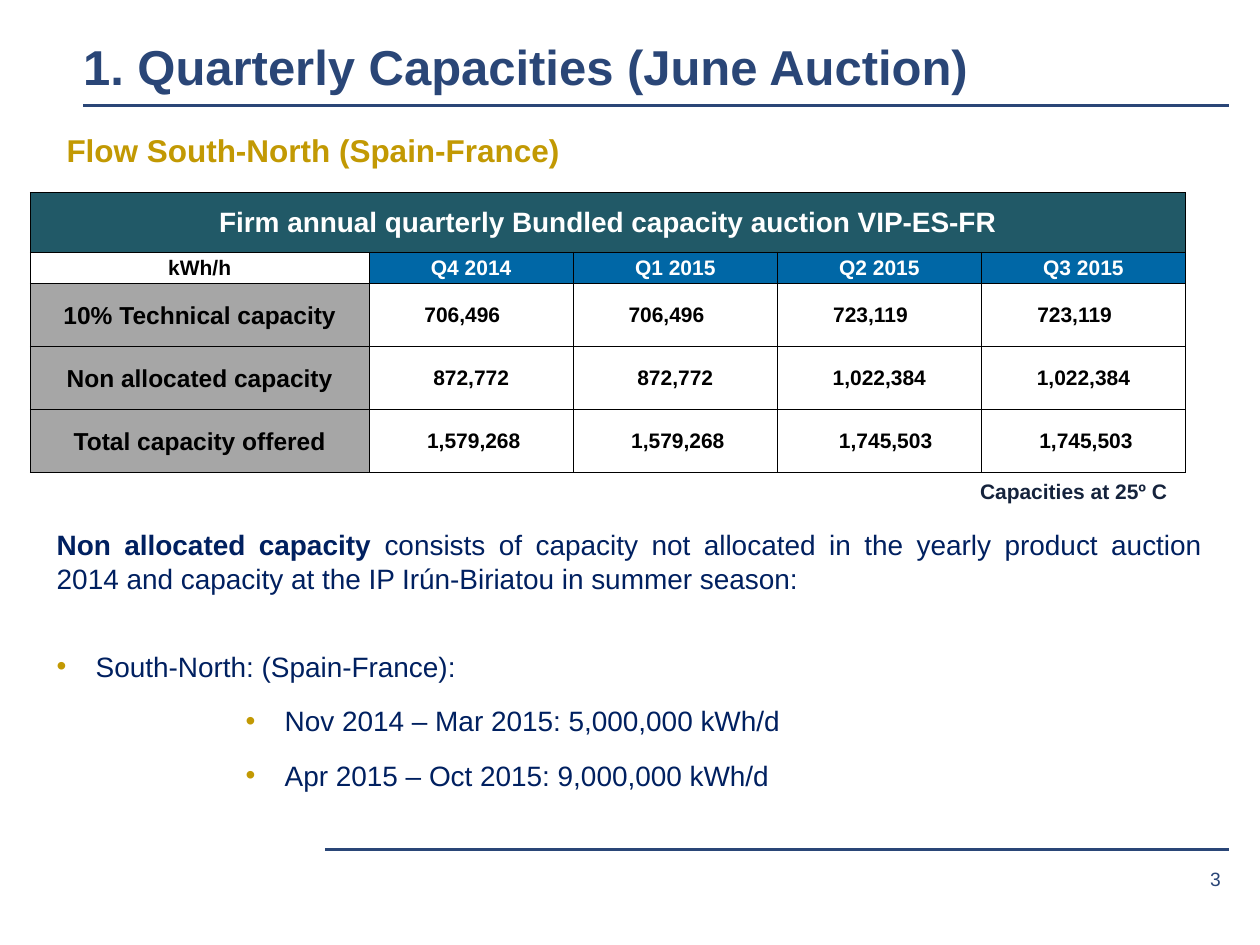
import pptx
import pptx.dml.color
import pptx.enum.shapes
import pptx.enum.text
import pptx.oxml.ns
import pptx.util
from dataclasses import dataclass
from lxml import etree
from typing import NamedTuple

Inches = pptx.util.Inches
Align = pptx.enum.text.PP_ALIGN
Anchor = pptx.enum.text.MSO_ANCHOR


@dataclass(frozen=True)
class Theme:
    font: str = "Arial"
    navy: str = "2A4677"
    gold: str = "C29903"
    body: str = "002060"
    note: str = "15233C"
    black: str = "000000"
    white: str = "FFFFFF"
    teal: str = "215967"
    blue: str = "0067A6"
    gray: str = "A6A6A6"
    title_size: int = 28
    subtitle_size: int = 18
    text_size: int = 16
    label_size: int = 14
    value_size: int = 12
    number_size: int = 11


THEME = Theme()


class Rule(NamedTuple):
    left: float
    right: float
    top: float


class Box(NamedTuple):
    left: float
    top: float
    width: float
    height: float


class CapacityRow(NamedTuple):
    label: str
    values: tuple
    shifts: tuple  # sideways offset of each value, in inches


class Bullet(NamedTuple):
    text: str
    level: int
    indent: float
    before: float


RULES = [Rule(0.66, 9.75, 0.84), Rule(2.58, 9.75, 6.74)]
QUARTERS = ("Q4 2014", "Q1 2015", "Q2 2015", "Q3 2015")
CAPACITIES = [
    CapacityRow("10% Technical capacity",
                ("706,496", "706,496", "723,119", "723,119"), (-0.07,) * 4),
    CapacityRow("Non allocated capacity",
                ("872,772", "872,772", "1,022,384", "1,022,384"), (0,) * 4),
    CapacityRow("Total capacity offered",
                ("1,579,268", "1,579,268", "1,745,503", "1,745,503"),
                (0.02, 0.02, 0.05, 0.02)),
]
BULLETS = [
    Bullet("South-North: (Spain-France):", 0, 0.31, 25),
    Bullet("Nov 2014 – Mar 2015: 5,000,000 kWh/d", 1, 1.81, 6),
    Bullet("Apr 2015 – Oct 2015: 9,000,000 kWh/d", 1, 1.81, 6),
]


def rgb(color: str):
    return pptx.dml.color.RGBColor.from_string(color)


def add_element(parent, tag: str, **attributes):
    return etree.SubElement(parent, pptx.oxml.ns.qn(tag), attributes)


def write(paragraph, text: str, *, size: float, color: str, bold: bool = False,
          align=Align.LEFT, before: float = 0, after: float = 0) -> None:
    """Append a formatted run and set the spacing of its paragraph."""
    paragraph.alignment = align
    paragraph.space_before = pptx.util.Pt(before)
    paragraph.space_after = pptx.util.Pt(after)
    run = paragraph.add_run()
    run.text = text
    run.font.name = THEME.font
    run.font.size = pptx.util.Pt(size)
    run.font.bold = bold
    run.font.color.rgb = rgb(color)


def set_frame(frame, *, inset: tuple = (0.1, 0.05), anchor=Anchor.TOP,
              wrap: bool = True):
    frame.auto_size = pptx.enum.text.MSO_AUTO_SIZE.NONE
    frame.word_wrap = wrap
    frame.vertical_anchor = anchor
    frame.margin_left = frame.margin_right = Inches(inset[0])
    frame.margin_top = frame.margin_bottom = Inches(inset[1])
    return frame.paragraphs[0]


def place(shape, box: Box) -> None:
    shape.left, shape.top, shape.width, shape.height = map(Inches, box)


def add_text_box(slide, box: Box, **frame_format):
    shape = slide.shapes.add_textbox(*map(Inches, box))
    return set_frame(shape.text_frame, **frame_format)


def add_rule(slide, rule: Rule) -> None:
    line = slide.shapes.add_connector(
        pptx.enum.shapes.MSO_CONNECTOR.STRAIGHT,
        Inches(rule.left), Inches(rule.top), Inches(rule.right), Inches(rule.top))
    line.line.color.rgb = rgb(THEME.navy)
    line.line.width = pptx.util.Pt(1.5)
    add_element(line._element.spPr, "a:effectLst")


def set_bullet(paragraph, indent: float) -> None:
    properties = paragraph._p.get_or_add_pPr()
    properties.set("marL", str(Inches(indent)))
    properties.set("indent", str(Inches(-0.31)))
    add_element(add_element(properties, "a:buClr"), "a:srgbClr", val=THEME.gold)
    add_element(properties, "a:buFont", typeface=THEME.font)
    add_element(properties, "a:buChar", char="•")


def fill_cell(cell, text: str, *, fill: str, size: float,
              color: str = THEME.black, shift: float = 0) -> None:
    properties = cell._tc.get_or_add_tcPr()
    for side in ("a:lnL", "a:lnR", "a:lnT", "a:lnB"):
        border = add_element(properties, side, w=str(pptx.util.Pt(0.5)))
        add_element(add_element(border, "a:solidFill"), "a:srgbClr", val=THEME.black)
    cell.fill.solid()
    cell.fill.fore_color.rgb = rgb(fill)
    cell.vertical_anchor = Anchor.MIDDLE
    cell.margin_left = Inches(0.01 + max(0, 2 * shift))
    cell.margin_right = Inches(0.01 + max(0, -2 * shift))
    cell.margin_top, cell.margin_bottom = Inches(0.01), 0
    if text:
        write(cell.text_frame.paragraphs[0], text, size=size, color=color,
              bold=True, align=Align.CENTER)


def add_capacity_table(slide, box: Box) -> None:
    table = slide.shapes.add_table(5, 5, *map(Inches, box)).table
    for column, width in zip(table.columns, [2.69] + [1.62] * 4):
        column.width = Inches(width)
    for row, height in zip(table.rows, [0.47, 0.25] + [0.5] * 3):
        row.height = Inches(height)

    # Heading across all columns
    table.cell(0, 0).merge(table.cell(0, 4))
    heading = "Firm annual quarterly Bundled capacity auction VIP-ES-FR"
    for column in range(5):
        fill_cell(table.cell(0, column), "" if column else heading,
                  fill=THEME.teal, size=THEME.text_size, color=THEME.white)

    # Unit and quarters
    fill_cell(table.cell(1, 0), "kWh/h", fill=THEME.white, size=THEME.value_size)
    for column, quarter in enumerate(QUARTERS, 1):
        fill_cell(table.cell(1, column), quarter, fill=THEME.blue,
                  size=THEME.value_size, color=THEME.white)

    # Capacities
    for row, capacity in enumerate(CAPACITIES, 2):
        fill_cell(table.cell(row, 0), capacity.label, fill=THEME.gray,
                  size=THEME.label_size)
        for column, (value, shift) in enumerate(zip(capacity.values, capacity.shifts), 1):
            fill_cell(table.cell(row, column), value, fill=THEME.white,
                      size=THEME.value_size, shift=shift)


def add_explanation(shape) -> None:
    place(shape, Box(0.35, 4.14, 9.29, 2.22))
    paragraph = set_frame(shape.text_frame)
    properties = paragraph._p.get_or_add_pPr()
    properties.set("marL", "0")
    properties.set("indent", "0")
    add_element(properties, "a:buNone")
    style = dict(size=THEME.text_size, color=THEME.body, align=Align.JUSTIFY, after=6)
    write(paragraph, "Non allocated capacity ", bold=True, **style)
    write(paragraph, "consists of capacity not allocated in the yearly product auction "
          "2014 and capacity at the IP Irún-Biriatou in summer season:", **style)
    for bullet in BULLETS:
        paragraph = shape.text_frame.add_paragraph()
        paragraph.level = bullet.level
        set_bullet(paragraph, bullet.indent)
        write(paragraph, bullet.text, before=bullet.before, **style)


def main() -> None:
    presentation = pptx.Presentation()
    presentation.slide_width, presentation.slide_height = Inches(10), Inches(7.5)
    slide = presentation.slides.add_slide(presentation.slide_layouts[1])

    # Rules and page number
    for rule in RULES:
        add_rule(slide, rule)
    number = add_text_box(slide, Box(8.94, 6.82, 0.75, 0.31), inset=(0, 0),
                          anchor=Anchor.MIDDLE)
    write(number, "3", size=THEME.number_size, color=THEME.navy, align=Align.RIGHT)

    # Title and subtitle
    title = slide.shapes.title
    place(title, Box(0.66, 0.36, 9.11, 0.4))
    write(set_frame(title.text_frame, inset=(0, 0), anchor=Anchor.BOTTOM),
          "1. Quarterly Capacities (June Auction)",
          size=THEME.title_size, color=THEME.navy, bold=True)
    write(add_text_box(slide, Box(0.43, 0.99, 4.43, 0.4)),
          "Flow South-North (Spain-France)",
          size=THEME.subtitle_size, color=THEME.gold, bold=True, after=6)

    # Table, its note and the explanation
    add_capacity_table(slide, Box(0.24, 1.53, 9.17, 2.22))
    write(add_text_box(slide, Box(7.68, 3.75, 1.7, 0.3), wrap=False),
          "Capacities at 25º C", size=THEME.value_size, color=THEME.note, bold=True)
    add_explanation(slide.placeholders[1])

    presentation.save("out.pptx")


if __name__ == "__main__":
    main()
